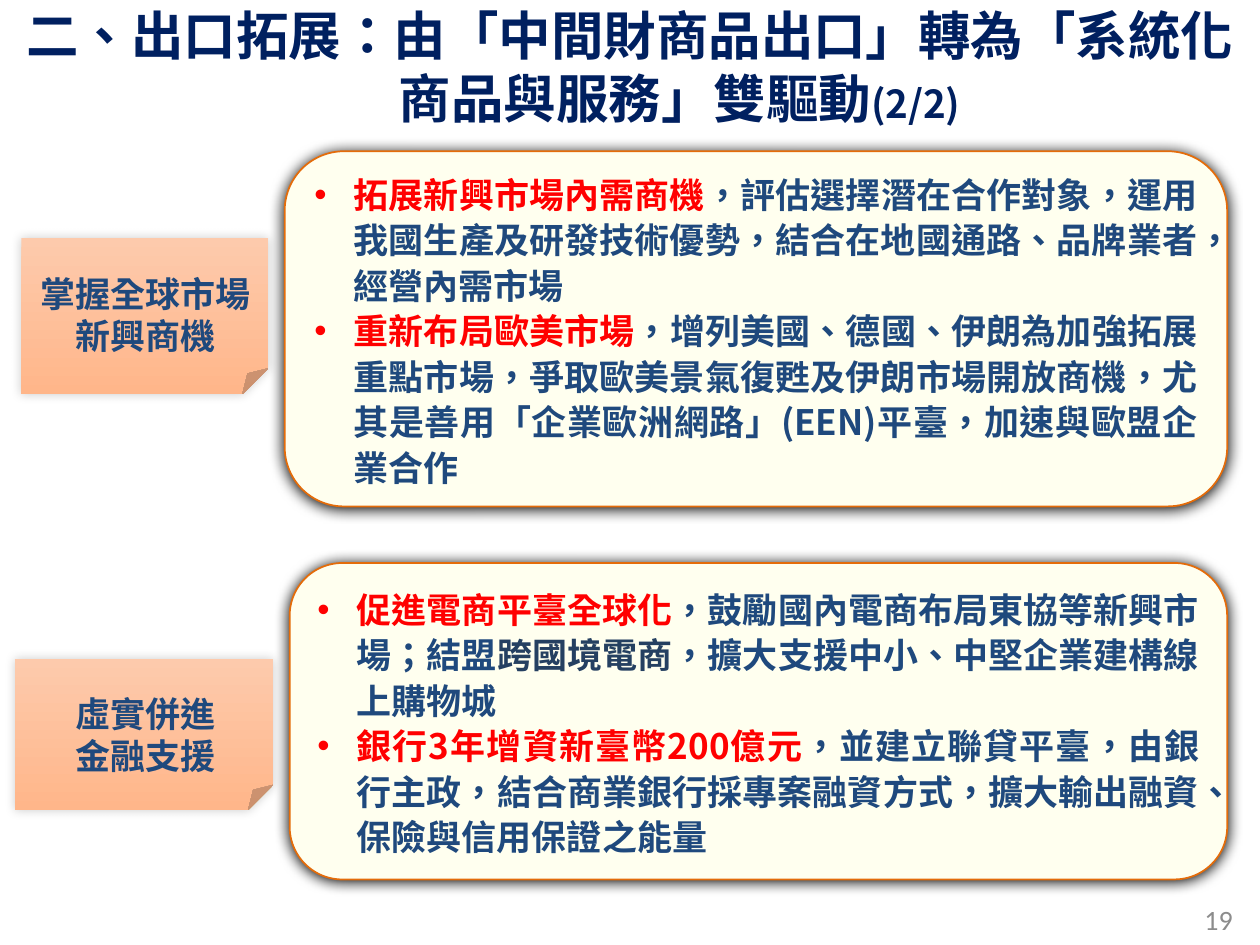
from lxml.etree import SubElement
from pptx import Presentation
from pptx.dml.color import RGBColor as RGB
from pptx.enum.shapes import MSO_SHAPE as SHAPE
from pptx.enum.text import MSO_ANCHOR as ANCHOR, PP_ALIGN as ALIGN
from pptx.oxml.ns import qn
from pptx.util import Cm, Pt

C = {"navy": "002060", "blue": "1F497D", "slate": "254061", "red": "FF0000",
     "gray": "8C8C8C", "cream": "FFFFEF", "orange": "E46C0A",
     "peach": "FDCAAC", "apricot": "FFB68A", "black": "000000"}
CJK = "Noto Sans CJK SC"


def write(p, runs, align, bold=True, font=CJK):
    p.alignment = align
    for text, size, color in runs:
        r = p.add_run()
        r.text = text
        r.font.size = Pt(size)
        r.font.bold = bold
        r.font.name = font
        r.font.color.rgb = RGB.from_string(C[color])
        rPr = r._r.get_or_add_rPr()
        rPr.set("lang", "zh-TW")
        rPr.set("altLang", "en-US")
        SubElement(rPr, qn("a:ea"), typeface=font)


def add_shadow(sp, alpha, blur, dist, angle):
    sp.shadow.inherit = False
    effects = sp._element.spPr.find(qn("a:effectLst"))
    shadow = SubElement(effects, qn("a:outerShdw"), blurRad=str(Pt(blur)),
                        dist=str(Pt(dist)), dir=str(angle * 60000),
                        algn="ctr", rotWithShape="0")
    color = SubElement(shadow, qn("a:srgbClr"), val=C["black"])
    SubElement(color, qn("a:alpha"), val=str(alpha * 1000))


prs = Presentation()
prs.slide_width, prs.slide_height = Cm(25.4), Cm(19.05)
s = prs.slides.add_slide(prs.slide_layouts[6])

notes = [(0.43, 4.8, 4.98, 3.15), (0.3, 13.28, 5.21, 3.05)]
for box in notes:
    sp = s.shapes.add_shape(SHAPE.FOLDED_CORNER, *map(Cm, box))
    sp.fill.gradient()
    sp.fill.gradient_angle = 270
    for stop, name in zip(sp.fill.gradient_stops, ("peach", "apricot")):
        stop.color.rgb = RGB.from_string(C[name])
    sp.line.fill.background()
    add_shadow(sp, 20, 6, 0, 225)

texts = [
    ((0.53, 5.36, 4.8, 1.96), ALIGN.CENTER, CJK, True,
     [[("掌握全球市場新興商機", 20, "blue")]]),
    ((0.53, 13.84, 4.8, 1.93), ALIGN.CENTER, CJK, True,
     [[("虛實併進", 20, "blue")], [("金融支援", 20, "blue")]]),
    ((0, -0.51, 25.4, 3.68), ALIGN.CENTER, CJK, True,
     [[("二、出口拓展：由「中間財商品出口」轉為「系統化商品與服務」雙驅動", 30, "navy"),
       ("(2/2)", 22, "navy")]]),
    ((19.18, 18.03, 5.92, 1.02), ALIGN.RIGHT, "Calibri", False,
     [[("19", 16, "gray")]]),
]
for box, align, font, bold, paragraphs in texts:
    tf = s.shapes.add_textbox(*map(Cm, box)).text_frame
    tf.word_wrap = True
    tf.vertical_anchor = ANCHOR.MIDDLE
    for i, runs in enumerate(paragraphs):
        p = tf.add_paragraph() if i else tf.paragraphs[0]
        write(p, runs, align, bold, font)
        if runs[0][2] == "navy":
            pPr = p._p.get_or_add_pPr()
            pPr.set("marL", str(Cm(2)))
            pPr.set("indent", str(-Cm(2)))

panels = [
    ((5.84, 11.35, 18.9, 6.38), 0.1, [
        [("促進電商平臺全球化", "red"),
         ("，鼓勵國內電商布局東協等新興市場；結盟", "blue"),
         ("跨國境電商", "slate"),
         ("，擴大支援中小、中堅企業建構線上購物城", "blue")],
        [("銀行3年增資新臺幣200億元", "red"),
         ("，並建立聯貸平臺，由銀行主政，結合商業銀行採專案融資方式，"
          "擴大輸出融資、保險與信用保證之能量", "blue")]]),
    ((5.74, 3.05, 19, 7.16), 0, [
        [("拓展新興市場內需商機", "red"),
         ("，評估選擇潛在合作對象，運用我國生產及研發技術優勢，"
          "結合在地國通路、品牌業者，經營內需市場", "blue")],
        [("重新布局歐美市場", "red"),
         ("，增列美國、德國、伊朗為加強拓展重點市場，爭取歐美景氣復甦及伊朗市場開放商機，"
          "尤其是善用「企業歐洲網路」(EEN)平臺，加速與歐盟企業合作", "blue")]]),
]
for box, inset, paragraphs in panels:
    sp = s.shapes.add_shape(SHAPE.ROUNDED_RECTANGLE, *map(Cm, box))
    sp.fill.solid()
    sp.fill.fore_color.rgb = RGB.from_string(C["cream"])
    sp.line.color.rgb = RGB.from_string(C["orange"])
    sp.line.width = Pt(1)
    add_shadow(sp, 100, 8.5, 1, 90)
    tf = sp.text_frame
    tf.word_wrap = True
    tf.vertical_anchor = ANCHOR.MIDDLE
    tf.margin_top = tf.margin_bottom = Cm(inset)
    for i, runs in enumerate(paragraphs):
        p = tf.add_paragraph() if i else tf.paragraphs[0]
        p.line_spacing = Pt(26)
        write(p, [(text, 20, color) for text, color in runs], ALIGN.JUSTIFY)
        pPr = p._p.get_or_add_pPr()
        pPr.set("marL", str(Cm(0.79)))
        pPr.set("indent", str(-Cm(0.79)))
        SubElement(pPr, qn("a:buFont"), typeface="Arial")
        SubElement(pPr, qn("a:buChar"), char="•")

prs.save("out.pptx")
